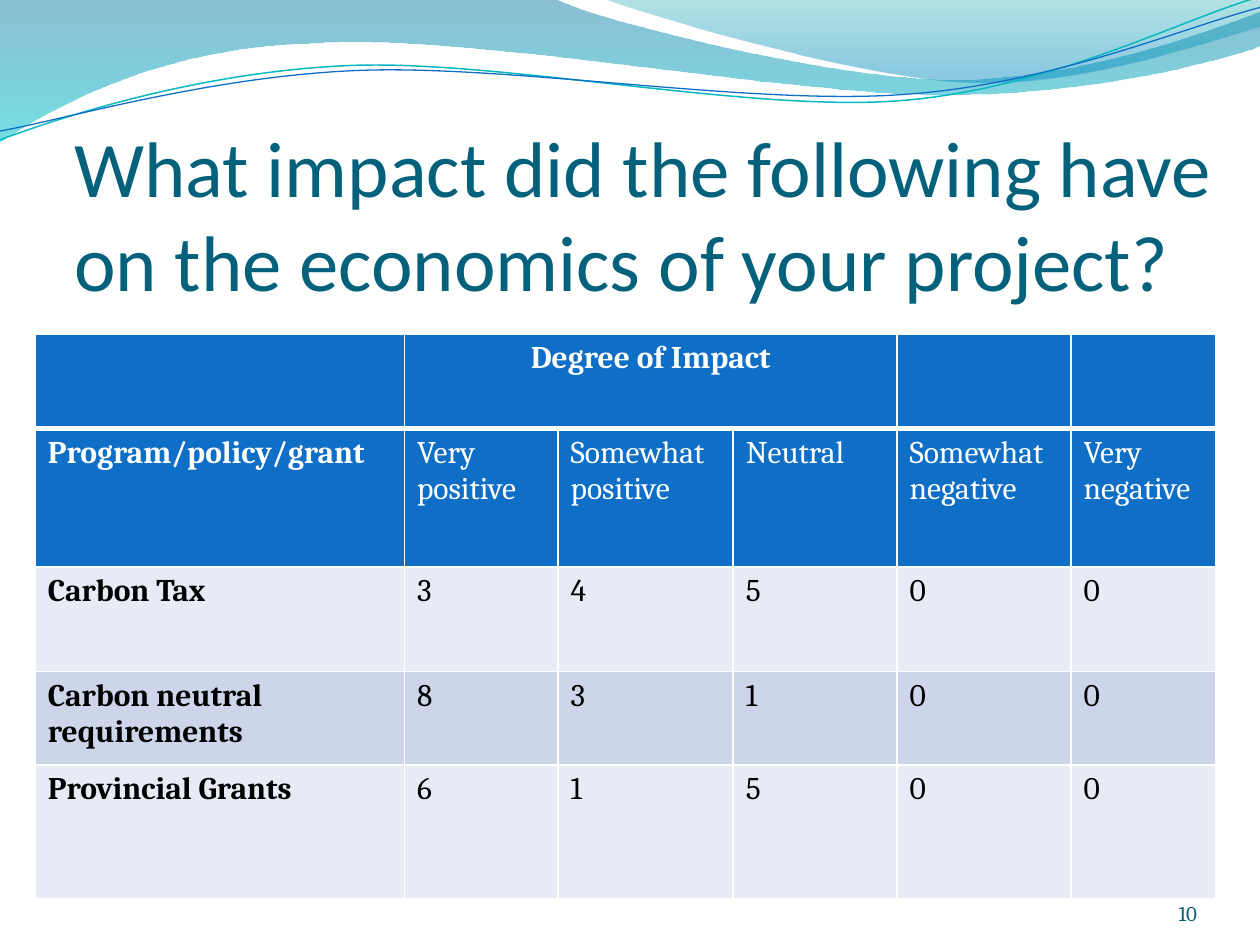
from math import cos, sin, radians
from pptx import Presentation
from pptx.util import Inches, Pt
from pptx.dml.color import RGBColor as Rgb
from pptx.enum.text import PP_ALIGN as Align, MSO_ANCHOR as Anchor
from pptx.oxml import parse_xml
from pptx.oxml.ns import qn, nsdecls
from lxml.etree import SubElement as Sub

BLUE, WHITE, BLACK = "0F6FC6", "FFFFFF", "000000"
BANDS = ["E7EBF5", "CCD5EA"]
TILT = 2.7

# Each wave: start point, then line ends (2 numbers) or Bézier curves (6)
BAND = [(0, 0), (4.4, -0.01), (4.76, 0.17, 6.64, 0.63, 7.58, 0.63),
        (8.53, 0.63, 9.58, 0.26, 10, 0.09), (10.01, 0.36),
        (9.83, 0.44, 8.7, 0.76, 7.46, 0.75),
        (6.22, 0.75, 3.82, 0.28, 2.57, 0.34),
        (1.29, 0.36, 0.46, 0.83, -0.01, 1.13), (0, 0)]
CREST = [(4.79, -0.01), (5.09, 0.11, 6.82, 0.62, 7.69, 0.65),
         (8.56, 0.69, 9.61, 0.32, 10, 0.21), (10, 0), (4.79, -0.01)]
TEAL_LINE = [(0, 1.11), (0.48, 0.93, 1.58, 0.57, 2.77, 0.52),
             (3.95, 0.47, 5.93, 0.89, 7.13, 0.8),
             (8.33, 0.71, 9.38, 0.15, 9.98, -0.02)]
BLUE_LINE = [(0, 1.04), (0.47, 0.96, 1.64, 0.61, 2.83, 0.56),
             (4.03, 0.51, 5.97, 0.84, 7.17, 0.75),
             (8.36, 0.67, 9.41, 0.21, 10, 0.06)]

COLS = [2.93, 1.22, 1.39, 1.3, 1.38, 1.15]
ROWS = [0.75, 1.1, 0.83, 0.74, 1.06]
DATA = [
    ["", "Degree of Impact", "", "", "", ""],
    ["Program/policy/grant", "Very positive", "Somewhat positive", "Neutral",
     "Somewhat negative", "Very negative"],
    ["Carbon Tax", "3", "4", "5", "0", "0"],
    ["Carbon neutral requirements", "8", "3", "1", "0", "0"],
    ["Provincial Grants", "6", "1", "5", "0", "0"],
]


def color(code):
    return Rgb.from_string(code)


def style(para, size, face, code, bold=False, align=Align.LEFT):
    font = para.font
    font.size, font.name, font.bold = Pt(size), face, bold
    font.color.rgb = color(code)
    para.alignment = align


def turn(points, mid, angle):
    """Rotate points clockwise about a centre."""
    (mx, my), a = mid, radians(angle)
    return [(mx + (x - mx) * cos(a) - (y - my) * sin(a),
             my + (x - mx) * sin(a) + (y - my) * cos(a)) for x, y in points]


def wave(slide, left, top, parts, close, mid=(0, 0), tilt=0):
    flat = [pair for part in parts for pair in zip(part[::2], part[1::2])]
    points = [(Inches(left + x), Inches(top + y))
              for x, y in turn(flat, mid, tilt)]
    build = slide.shapes.build_freeform(*points[0])
    build.add_line_segments(points[1:], close=close)
    shape = build.convert_to_shape()
    # Join three points into each curve
    nodes = iter(list(shape.element.iter(qn("a:lnTo"))))
    for part in parts[1:]:
        node = next(nodes)
        if len(part) == 6:
            node.tag = qn("a:cubicBezTo")
            for _ in range(2):
                extra = next(nodes)
                node.append(extra[0])
                extra.getparent().remove(extra)
    shape.rotation = -tilt
    shape.shadow.inherit = False
    return shape


def add_waves(slide, left, top):
    # Translucent bands; each stop is position, colour, opacity in percent
    for parts, stops in [
        (BAND, [(0, "0074A1", 45), (1, "00C6CF", 55)]),
        (CREST, [(0, "00A1A9", 30), (0.8, "008BBF", 45)]),
    ]:
        shape = wave(slide, left, top, parts, True)
        shape.line.fill.background()
        shape.fill.gradient()
        shape.fill.gradient_angle = 270
        for stop, (place, code, _) in zip(shape.fill.gradient_stops, stops):
            stop.position = place
            stop.color.rgb = color(code)
        for node, stop in zip(shape.element.iter(qn("a:srgbClr")), stops):
            Sub(node, qn("a:alpha")).set("val", str(stop[2] * 1000))
    # Thin tilted lines
    for parts, mid, code, width in [
        (TEAL_LINE, (4.99, 0.58), "0AB8BF", 0.85),
        (BLUE_LINE, (5, 0.59), BLUE, 0.75),
    ]:
        shape = wave(slide, left, top, parts, False, mid, TILT)
        shape.fill.background()
        shape.line.color.rgb = color(code)
        shape.line.width = Pt(width)


def add_text(slide, box, text, inset=0, **look):
    frame = slide.shapes.add_textbox(*map(Inches, box)).text_frame
    frame.word_wrap = True
    frame.vertical_anchor = Anchor.BOTTOM
    frame.margin_left = frame.margin_right = frame.margin_bottom = 0
    frame.margin_top = Inches(inset)
    frame.text = text
    style(frame.paragraphs[0], **look)


def edge(cell, top, bottom):
    """Give a cell white borders."""
    props = cell._tc.get_or_add_tcPr()
    for spot, (side, width) in enumerate(
            [("L", 1), ("R", 1), ("T", top), ("B", bottom)]):
        props.insert(spot, parse_xml(
            f'<a:ln{side} {nsdecls("a")} w="{Pt(width)}"><a:solidFill>'
            f'<a:srgbClr val="{WHITE}"/></a:solidFill></a:ln{side}>'))


def add_grid(slide, left, top):
    table = slide.shapes.add_table(
        len(ROWS), len(COLS), Inches(left), Inches(top),
        Inches(sum(COLS)), Inches(sum(ROWS))).table
    table.first_row = table.horz_banding = False
    for col, width in zip(table.columns, COLS):
        col.width = Inches(width)
    for row, height in zip(table.rows, ROWS):
        row.height = Inches(height)
    for r, texts in enumerate(DATA):
        head = r < 2
        for c, text in enumerate(texts):
            cell = table.cell(r, c)
            cell.fill.solid()
            cell.fill.fore_color.rgb = color(BLUE if head else BANDS[r % 2])
            edge(cell, 3 if r == 1 else 1, 3 if r == 0 else 1)
            cell.text = text
            style(cell.text_frame.paragraphs[0], 18, "Cambria",
                  WHITE if head else BLACK, r == 0 or c == 0,
                  Align.CENTER if r == 0 else Align.LEFT)
    table.cell(0, 1).merge(table.cell(0, 3))


def main():
    deck = Presentation()
    deck.slide_width, deck.slide_height = Inches(10), Inches(7.5)
    slide = deck.slides.add_slide(deck.slide_layouts[6])
    add_waves(slide, 0, 0)
    # Title
    add_text(slide, (0.59, 0.36, 9.13, 2.08),
             "What impact did the following have on the economics of your project?",
             inset=0.05, size=45, face="Calibri", code="04617B")
    add_grid(slide, 0.28, 2.65)
    # Slide number
    add_text(slide, (8.67, 6.95, 0.83, 0.4), "10",
             size=12, face="Cambria", code="045D75", align=Align.RIGHT)
    deck.save("out.pptx")


if __name__ == "__main__":
    main()
